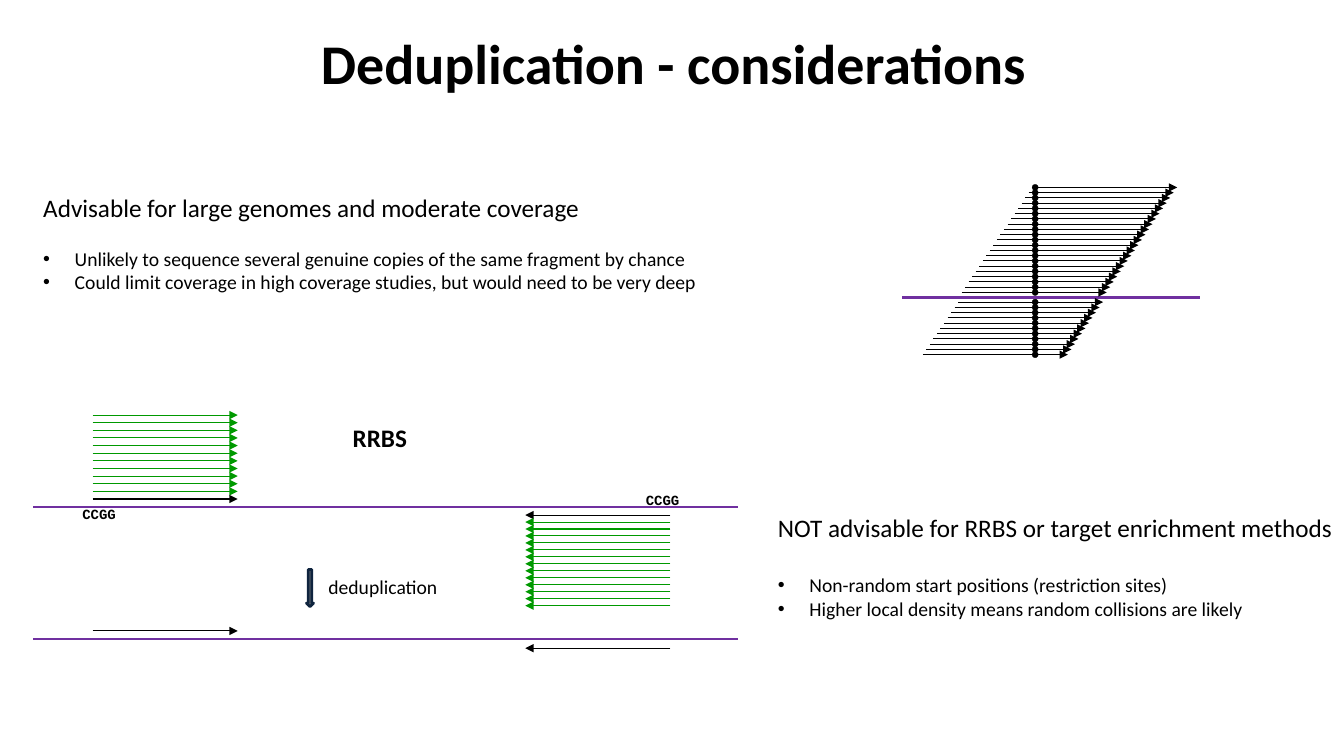
"""Build the slide on when deduplication of sequencing reads is advisable."""
from lxml import etree
from pptx import Presentation
from pptx.dml.color import RGBColor
from pptx.enum import shapes, text
from pptx.oxml import ns
from pptx.util import Pt

BLACK = RGBColor(0x00, 0x00, 0x00)
GREEN = RGBColor(0x00, 0x99, 0x00)
PURPLE = RGBColor(0x70, 0x30, 0xA0)
GREY = RGBColor(0x80, 0x80, 0x80)
NAVY = RGBColor(0x0F, 0x24, 0x3E)


class Sketch:
    def __init__(self, page, font="Calibri"):
        self.page = page
        self.font = font
        self.read_length = 103.6

    def line(self, start, end, y, color, width):
        line = self.page.shapes.add_connector(
            shapes.MSO_CONNECTOR.STRAIGHT, Pt(start), Pt(y), Pt(end), Pt(y))
        line.line.color.rgb = color
        line.line.width = Pt(width)
        etree.SubElement(line.element.spPr, ns.qn("a:effectLst"))
        return line

    def genome(self, start, end, y):
        self.line(start, end, y, PURPLE, 2)

    def read_arrow(self, start, y, color=BLACK, direction=1):
        end = start + direction * self.read_length
        arrow = self.line(start, end, y, color, 0.75)
        outline = arrow.element.spPr.find(ns.qn("a:ln"))
        etree.SubElement(outline, ns.qn("a:tailEnd"), type="triangle")

    def shape(self, kind, left, top, width, height, fill, outline, weight):
        shape = self.page.shapes.add_shape(
            kind, Pt(left), Pt(top), Pt(width), Pt(height))
        shape.shadow.inherit = False
        shape.fill.solid()
        shape.fill.fore_color.rgb = fill
        shape.line.color.rgb = outline
        shape.line.width = Pt(weight)
        return shape

    def box(self, left, top, width, height, wrap=True):
        box = self.page.shapes.add_textbox(
            Pt(left), Pt(top), Pt(width), Pt(height))
        box.text_frame.word_wrap = wrap
        return box.text_frame

    def span(self, para, words, size, bold=False, font=None):
        span = para.add_run()
        span.text = words
        span.font.name = font or self.font
        span.font.size = Pt(size)
        span.font.bold = bold
        span.font.color.rgb = BLACK

    def label(self, area, words, size, bold=False, font=None):
        frame = self.box(*area)
        self.span(frame.paragraphs[0], words, size, bold, font)
        return frame

    def advice(self, area, heading, points, gap, wrap=True):
        frame = self.box(*area, wrap=wrap)
        self.span(frame.paragraphs[0], heading, 18)
        for index, point in enumerate(points):
            para = frame.add_paragraph()
            if index == 0:
                para.space_before = Pt(gap)
            props = para._p.get_or_add_pPr()
            props.set("marL", str(Pt(22.5)))
            props.set("indent", str(Pt(-22.5)))
            etree.SubElement(props, ns.qn("a:buFont"), typeface="Arial")
            etree.SubElement(props, ns.qn("a:buChar"), char="•")
            self.span(para, point, 14)


def draw_random_reads(sketch):
    sketch.genome(644.4, 856.8, 212.4)
    crossing, dot = 737.3, 4.3
    for row in range(32):
        y = 133.9 + 3.75 * row + (3.2 if row > 20 else 0)
        sketch.read_arrow(crossing - 2.52 * row, y)
        sketch.shape(shapes.MSO_SHAPE.OVAL, crossing, y - dot / 2, dot, dot,
                     BLACK, BLACK, 0.25)


def draw_rrbs(sketch):
    forward, reverse = 66.2, 478.8
    for y in (362.2, 456.5):
        sketch.genome(23.8, 527, y)
    for row in range(12):
        sketch.read_arrow(forward, 296.5 + 5.45 * row,
                          BLACK if row == 11 else GREEN)
    for row in range(14):
        sketch.read_arrow(reverse, 367.9 + 4.98 * row,
                          GREEN if row else BLACK, -1)
    sketch.read_arrow(forward, 450.7)
    sketch.read_arrow(reverse, 463, direction=-1)
    arrow = sketch.shape(shapes.MSO_SHAPE.RIGHT_ARROW, 208.1, 417.6, 26.6, 5,
                         GREY, NAVY, 2)
    arrow.rotation = 90
    sketch.label((244.8, 298.1, 60.5, 28.8), "RRBS", 18, True)
    sketch.label((227.5, 406.8, 96.5, 24.5), "deduplication", 14)
    for left, top in ((51.8, 357.8), (454.3, 347.8)):
        sketch.label((left, top, 41, 19.4), "CCGG", 10, True, "Courier New")


def main():
    deck = Presentation()
    deck.slide_width, deck.slide_height = Pt(960), Pt(540)
    sketch = Sketch(deck.slides.add_slide(deck.slide_layouts[6]))
    title = sketch.label((49, -0.7, 864, 90), "Deduplication - considerations",
                         40, True)
    title.vertical_anchor = text.MSO_ANCHOR.MIDDLE
    title.paragraphs[0].alignment = text.PP_ALIGN.CENTER
    draw_rrbs(sketch)
    draw_random_reads(sketch)
    sketch.advice(
        (23.8, 133.9, 702.7, 79.9),
        "Advisable for large genomes and moderate coverage",
        ("Unlikely to sequence several genuine copies of the same fragment by chance",
         "Could limit coverage in high coverage studies, but would need to be very deep"),
        17)
    sketch.advice(
        (548.6, 362.2, 414.7, 85),
        "NOT advisable for RRBS or target enrichment methods",
        ("Non-random start positions (restriction sites)",
         "Higher local density means random collisions are likely"),
        22, wrap=False)
    deck.save("out.pptx")


if __name__ == "__main__":
    main()
